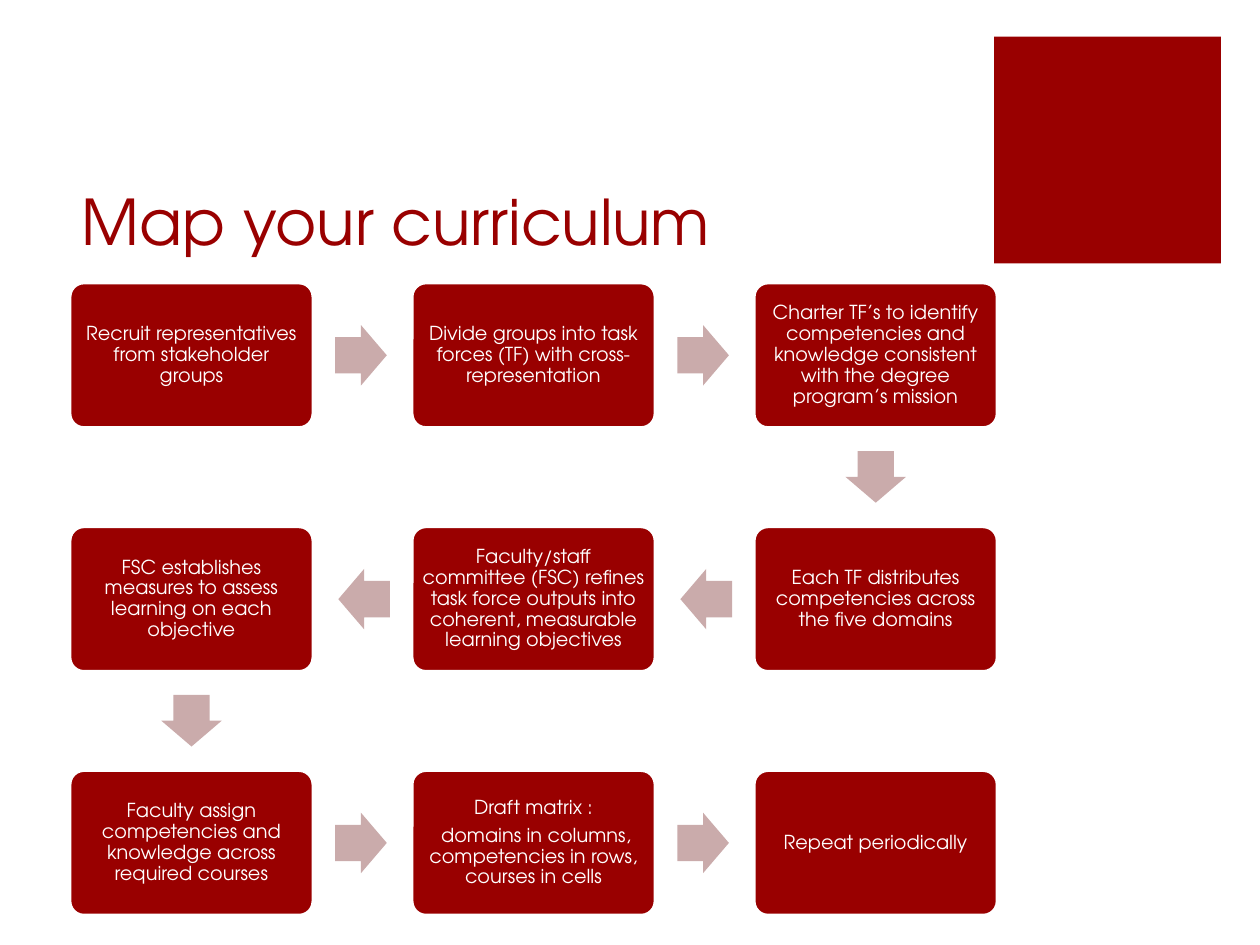
"""Build the curriculum mapping slide with its snaking process diagram."""
import dataclasses

import pptx
import pptx.dml.color
import pptx.enum.shapes
import pptx.enum.text
import pptx.util

Inches = pptx.util.Inches
Pt = pptx.util.Pt
RGB = pptx.dml.color.RGBColor
SHAPE = pptx.enum.shapes.MSO_SHAPE
ALIGN = pptx.enum.text.PP_ALIGN
ANCHOR = pptx.enum.text.MSO_ANCHOR


@dataclasses.dataclass(frozen=True)
class Theme:
    font: str = "TeX Gyre Adventor"
    red: RGB = RGB(0x99, 0x00, 0x00)
    pink: RGB = RGB(0xCA, 0xAB, 0xAB)
    white: RGB = RGB(0xFF, 0xFF, 0xFF)
    title_size: Pt = Pt(36)
    step_size: Pt = Pt(11)


THEME = Theme()
COLS = 3
LEFT, TOP = 0.55, 2.24
PITCH_X, PITCH_Y = 2.715, 1.935
BOX_W, BOX_H = 1.94, 1.16
ARROW_W, ARROW_H = 0.41, 0.48
SIDE_GAP, DOWN_GAP = 0.17, 0.18
STEPS = [
    ["Recruit representatives from stakeholder groups"],
    ["Divide groups into task forces (TF) with cross-representation"],
    ["Charter TF’s to identify competencies and knowledge consistent "
     "with the degree program’s mission"],
    ["Each TF distributes competencies across the five domains"],
    ["Faculty/staff committee (FSC) refines task force outputs into "
     "coherent, measurable learning objectives"],
    ["FSC establishes measures to assess learning on each objective"],
    ["Faculty assign competencies and knowledge across required courses"],
    ["Draft matrix :",
     " domains in columns, competencies in rows, courses in cells"],
    ["Repeat periodically"],
]


def add_run(p, text, size, color):
    r = p.add_run()
    r.text = text
    r.font.name = THEME.font
    r.font.size = size
    r.font.color.rgb = color


def add_block(slide, kind, x, y, w, h, color):
    sp = slide.shapes.add_shape(kind, Inches(x), Inches(y), Inches(w), Inches(h))
    sp.shadow.inherit = False
    sp.fill.solid()
    sp.fill.fore_color.rgb = color
    sp.line.fill.background()
    return sp


def set_title(slide, text):
    sp = slide.shapes.title
    sp.left, sp.top = Inches(0.55), Inches(0.76)
    sp.width, sp.height = Inches(7.07), Inches(1.34)
    tf = sp.text_frame
    tf.auto_size = pptx.enum.text.MSO_AUTO_SIZE.NONE
    tf.vertical_anchor = ANCHOR.BOTTOM
    p = tf.paragraphs[0]
    p.alignment = ALIGN.LEFT
    add_run(p, text, THEME.title_size, THEME.red)


def add_step(slide, x, y, lines):
    sp = add_block(slide, SHAPE.ROUNDED_RECTANGLE, x, y, BOX_W, BOX_H, THEME.red)
    sp.adjustments[0] = 0.1
    sp.line.color.rgb = THEME.white
    sp.line.width = Pt(2.5)
    tf = sp.text_frame
    tf.word_wrap = True
    tf.vertical_anchor = ANCHOR.MIDDLE
    tf.margin_left = tf.margin_right = Inches(0.05)
    tf.margin_top = tf.margin_bottom = Inches(0.05)
    for i, line in enumerate(lines):
        p = tf.add_paragraph() if i else tf.paragraphs[0]
        p.alignment = ALIGN.CENTER
        p.line_spacing = 0.9
        p.space_after = Pt(4)
        add_run(p, line, THEME.step_size, THEME.white)


def add_arrow(slide, x, y, turn):
    if turn == 90:
        ax = x + (BOX_W - ARROW_W) / 2
        ay = y + BOX_H + DOWN_GAP - (ARROW_H - ARROW_W) / 2
    else:
        ax = x + BOX_W + SIDE_GAP if turn == 0 else x - SIDE_GAP - ARROW_W
        ay = y + (BOX_H - ARROW_H) / 2
    sp = add_block(slide, SHAPE.RIGHT_ARROW, ax, ay, ARROW_W, ARROW_H, THEME.pink)
    sp.adjustments[0] = 0.6
    sp.adjustments[1] = 0.5
    sp.rotation = turn


def add_process(slide, steps):
    for i, lines in enumerate(steps):
        row, place = divmod(i, COLS)
        backward = row % 2 == 1
        col = COLS - 1 - place if backward else place
        x, y = LEFT + col * PITCH_X, TOP + row * PITCH_Y
        add_step(slide, x, y, lines)
        if i < len(steps) - 1:
            turn = 90 if place == COLS - 1 else 180 if backward else 0
            add_arrow(slide, x, y, turn)


def main():
    prs = pptx.Presentation()
    prs.slide_width, prs.slide_height = Inches(10), Inches(7.5)
    slide = prs.slides.add_slide(prs.slide_layouts[5])
    add_block(slide, SHAPE.RECTANGLE, 7.89, 0.29, 1.8, 1.8, THEME.red)
    set_title(slide, "Map your curriculum")
    add_process(slide, STEPS)
    prs.save("out.pptx")


if __name__ == "__main__":
    main()
